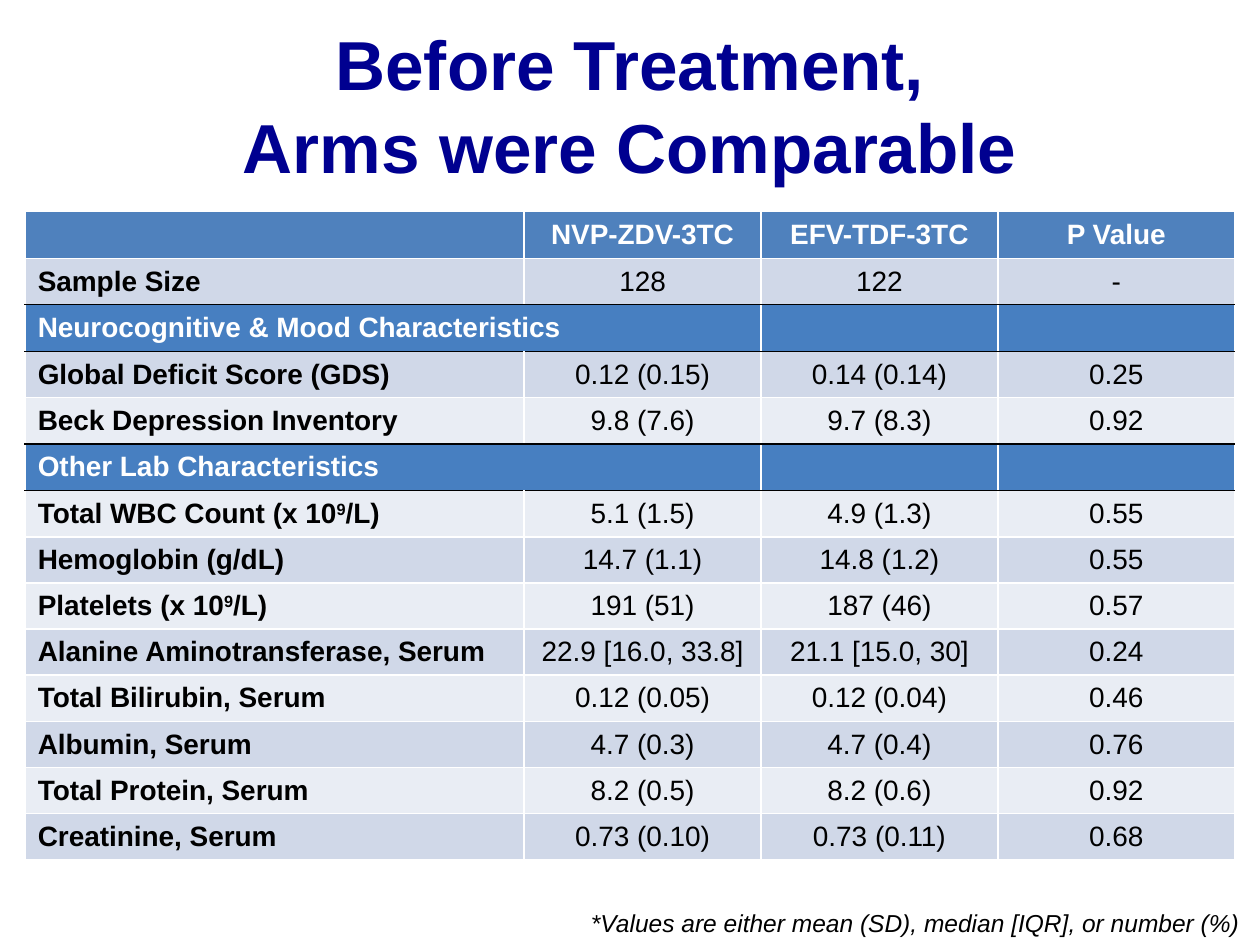
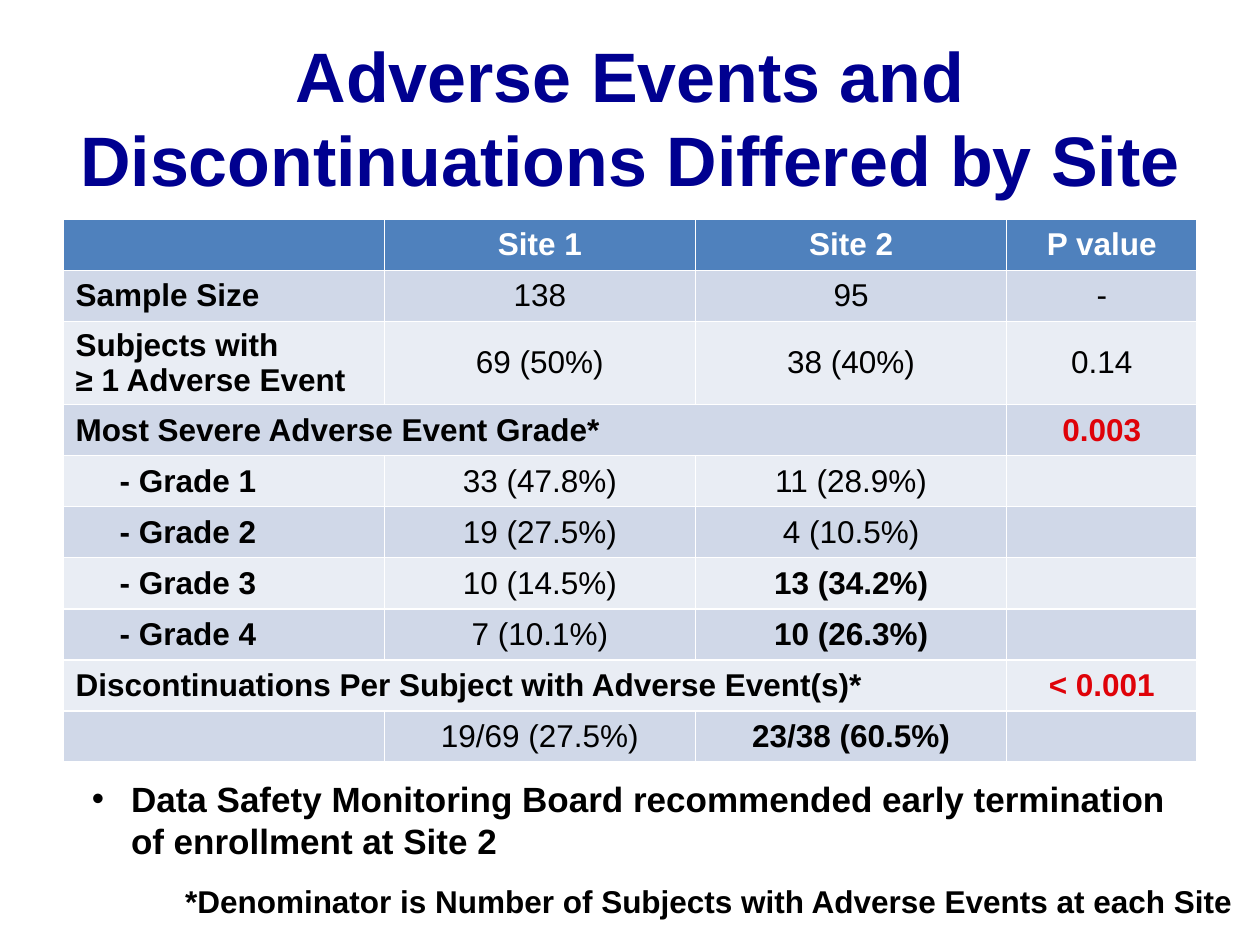
"""Build two slides of trial tables: baseline comparability and adverse events."""
import pptx
import pptx.util
import pptx.dml.color
import pptx.enum.text
import pptx.oxml
import pptx.oxml.ns

Inches, Pt = pptx.util.Inches, pptx.util.Pt
ALIGN = pptx.enum.text.PP_ALIGN
MIDDLE = pptx.enum.text.MSO_ANCHOR.MIDDLE
NS = pptx.oxml.ns.nsdecls("a")
COLORS = {
    "title": "000090", "text": "000000", "white": "FFFFFF", "alert": "DF0209",
    "header": "4F81BD", "section": "477FC1", "odd": "D0D8E8", "even": "E9EDF4",
}


def write(tf, text, size, color="text", bold=False, italic=False, align=ALIGN.LEFT):
    """Fill a frame: newline starts a paragraph, \\v breaks a line, |x| is superscript."""
    for i, line in enumerate(text.split("\n")):
        p = tf.add_paragraph() if i else tf.paragraphs[0]
        p.alignment = align
        p.space_before = Pt(0)
        for j, part in enumerate(line.split("\v")):
            if j:
                p.add_line_break()
            for k, piece in enumerate(part.split("|")):
                if not piece:
                    continue
                r = p.add_run()
                r.text = piece
                r.font.name, r.font.size = "Arial", Pt(size)
                r.font.bold, r.font.italic = bold, italic
                r.font.color.rgb = pptx.dml.color.RGBColor.from_string(COLORS[color])
                if k % 2:
                    r.font._element.set("baseline", "30000")
        p._p.get_or_add_endParaRPr().set("sz", str(int(size * 100)))


def rule(cell, side):
    """Draw a thin black line on one side of a cell."""
    line = pptx.oxml.parse_xml(
        f'<a:{side} {NS} w="12700"><a:solidFill><a:srgbClr val="{COLORS["text"]}"/>'
        f'</a:solidFill></a:{side}>')
    tcPr = cell._tc.get_or_add_tcPr()
    tcPr.insert(len(tcPr.findall(pptx.oxml.ns.qn("a:lnT"))), line)


baseline = [
    ["", "NVP-ZDV-3TC", "EFV-TDF-3TC", "P Value"],
    ["Sample Size", "128", "122", "-"],
    ["Neurocognitive & Mood Characteristics", "", "", ""],
    ["Global Deficit Score (GDS)", "0.12 (0.15)", "0.14 (0.14)", "0.25"],
    ["Beck Depression Inventory", "9.8 (7.6)", "9.7 (8.3)", "0.92"],
    ["Other Lab Characteristics", "", "", ""],
    ["Total WBC Count (x 10|9|/L)", "5.1 (1.5)", "4.9 (1.3)", "0.55"],
    ["Hemoglobin (g/dL)", "14.7 (1.1)", "14.8 (1.2)", "0.55"],
    ["Platelets (x 10|9|/L)", "191 (51)", "187 (46)", "0.57"],
    ["Alanine Aminotransferase, Serum", "22.9 [16.0, 33.8]", "21.1 [15.0, 30]", "0.24"],
    ["Total Bilirubin, Serum", "0.12 (0.05)", "0.12 (0.04)", "0.46"],
    ["Albumin, Serum", "4.7 (0.3)", "4.7 (0.4)", "0.76"],
    ["Total Protein, Serum", "8.2 (0.5)", "8.2 (0.6)", "0.92"],
    ["Creatinine, Serum", "0.73 (0.10)", "0.73 (0.11)", "0.68"],
]
adverse = [
    ["", "Site 1", "Site 2", "P value"],
    ["Sample Size", "138", "95", "-"],
    ["Subjects with\n≥ 1 Adverse Event", "69 (50%)", "38 (40%)", "0.14"],
    ["Most Severe Adverse Event Grade*", "", "", "0.003"],
    ["- Grade 1", "33 (47.8%)", "11 (28.9%)", ""],
    ["- Grade 2", "19 (27.5%)", "4 (10.5%)", ""],
    ["- Grade 3", "10 (14.5%)", "13 (34.2%)", ""],
    ["- Grade 4", "7 (10.1%)", "10 (26.3%)", ""],
    ["Discontinuations Per Subject with Adverse Event(s)*", "", "", "< 0.001"],
    ["", "19/69 (27.5%)", "23/38 (60.5%)", ""],
]
strong = {"13 (34.2%)", "10 (26.3%)", "23/38 (60.5%)"}
alerts = {"0.003", "< 0.001"}

slides = [
    dict(layout=5, title="Before Treatment,\vArms were Comparable", title_size=39.6,
         title_at=(0.25, 0.2, 9.5, 1.25), rows=baseline, size=16,
         table_at=(0.2, 1.68, 9.6, 5.13), widths=(3.96, 1.88, 1.88, 1.88),
         sections=(2, 5), merges={2: 1, 5: 1},
         note="*Values are either mean (SD), median [IQR], or number (%)",
         note_at=(4.5, 7.16, 5.44, 0.34), note_format=dict(size=14, italic=True)),
    dict(layout=1, title="Adverse Events and Discontinuations Differed by Site", title_size=40,
         title_at=(0.5, 0.3, 9, 1.25), rows=adverse, size=18,
         table_at=(0.5, 1.74, 9, 4.05), widths=(2.55, 2.47, 2.47, 1.51),
         sections=(), merges={3: 2, 8: 2},
         note="*Denominator is Number of Subjects with Adverse Events at each Site",
         note_at=(1.14, 6.95, 8.74, 0.4), note_format=dict(size=18, bold=True)),
]

prs = pptx.Presentation()
prs.slide_width, prs.slide_height = Inches(10), Inches(7.5)

for d in slides:
    s = prs.slides.add_slide(prs.slide_layouts[d["layout"]])
    sp = s.shapes.title
    sp.left, sp.top, sp.width, sp.height = map(Inches, d["title_at"])
    sp.text_frame.auto_size = pptx.enum.text.MSO_AUTO_SIZE.NONE
    sp.text_frame.vertical_anchor = MIDDLE
    write(sp.text_frame, d["title"], d["title_size"], "title", bold=True, align=ALIGN.CENTER)

    rows = d["rows"]
    table = s.shapes.add_table(len(rows), 4, *map(Inches, d["table_at"])).table
    table.horz_banding = False
    for column, width in zip(table.columns, d["widths"]):
        column.width = Inches(width)
    for i, row in enumerate(rows):
        section = i in d["sections"]
        fill = "header" if i == 0 else "section" if section else "odd" if i % 2 else "even"
        if "\n" in row[0]:
            table.rows[i].height = Inches(0.66)
        for j, value in enumerate(row):
            cell = table.cell(i, j)
            cell.fill.solid()
            cell.fill.fore_color.rgb = pptx.dml.color.RGBColor.from_string(COLORS[fill])
            cell.vertical_anchor = MIDDLE
            if value.startswith("- "):
                cell.margin_left = Inches(0.45)
            color = "white" if i == 0 or section else "alert" if value in alerts else "text"
            write(cell.text_frame, value, d["size"], color,
                  bold=i == 0 or j == 0 or value in strong | alerts,
                  align=ALIGN.CENTER if j else ALIGN.LEFT)
            if section or i - 1 in d["sections"]:
                rule(cell, "lnT")
            if section or i + 1 in d["sections"]:
                rule(cell, "lnB")
    for i, last in d["merges"].items():
        table.cell(i, 0).merge(table.cell(i, last))

    sp = s.shapes.add_textbox(*map(Inches, d["note_at"]))
    sp.text_frame.word_wrap = False
    write(sp.text_frame, d["note"], align=ALIGN.RIGHT, **d["note_format"])

sp = s.placeholders[1]
sp.left, sp.top, sp.width, sp.height = map(Inches, (0.63, 6.12, 8.75, 0.81))
tf = sp.text_frame
tf.auto_size = pptx.enum.text.MSO_AUTO_SIZE.NONE
pPr = tf.paragraphs[0]._p.get_or_add_pPr()
pPr.set("marL", str(Inches(0.31)))
pPr.set("indent", str(-Inches(0.31)))
pPr.append(pptx.oxml.parse_xml(f'<a:buChar {NS} char="•"/>'))
write(tf, "Data Safety Monitoring Board recommended early termination of enrollment at Site 2",
      20, bold=True)

prs.save("out.pptx")
